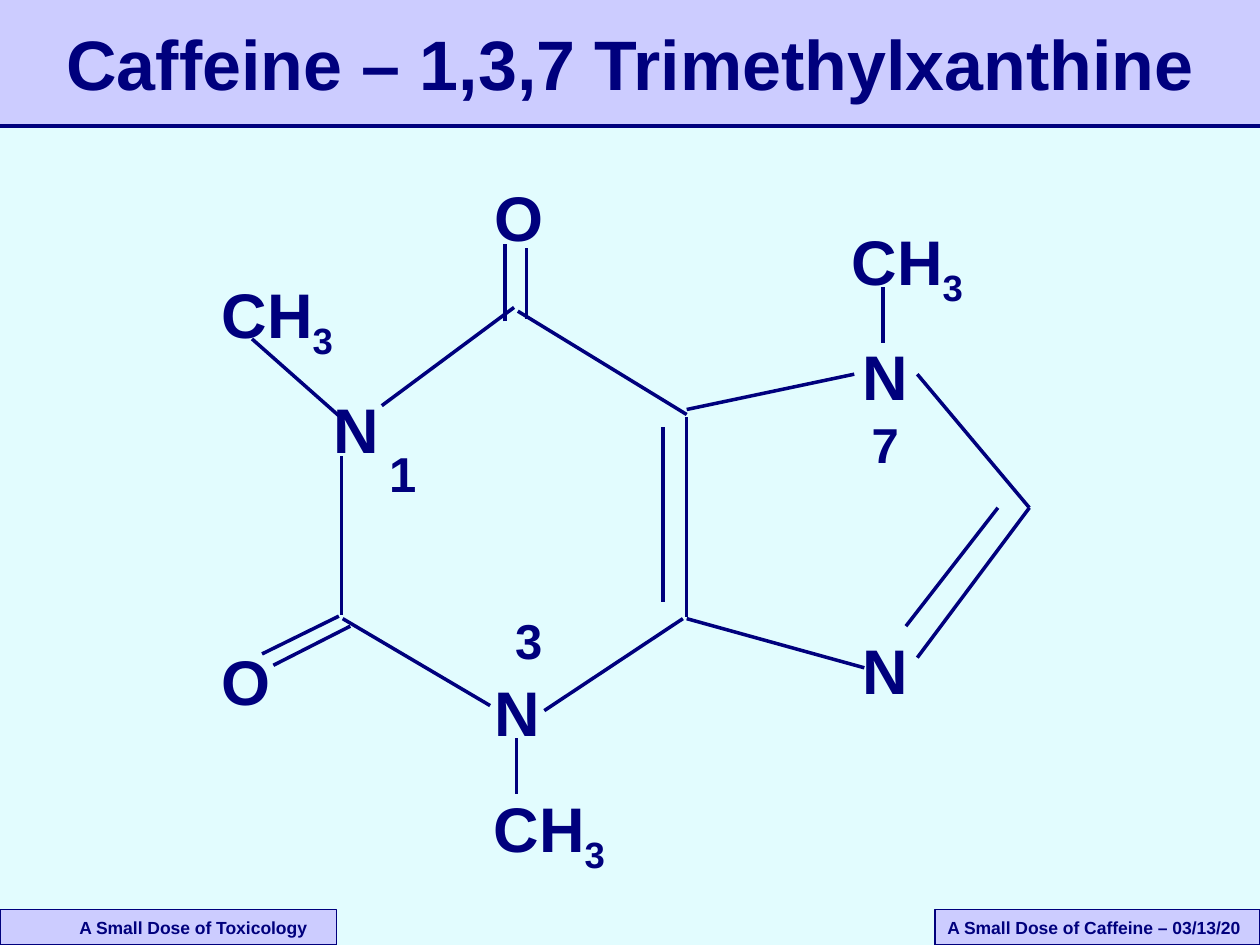
from dataclasses import dataclass

from pptx import Presentation
from pptx.dml.color import RGBColor
from pptx.enum.shapes import MSO_CONNECTOR, MSO_SHAPE
from pptx.enum.text import MSO_ANCHOR, PP_ALIGN
from pptx.oxml.ns import qn
from pptx.util import Inches, Pt
from lxml.etree import SubElement

COLS, ROWS = 100, 75  # square grid over the slide
CELL = Inches(10) // COLS


@dataclass(frozen=True)
class Theme:
    ink: RGBColor = RGBColor(0x00, 0x00, 0x7D)
    panel: RGBColor = RGBColor(0xCC, 0xCC, 0xFF)
    background: RGBColor = RGBColor(0xE2, 0xFC, 0xFE)
    font: str = "Arial"
    title: int = 40
    atom: int = 36
    number: int = 28
    footer: int = 10
    bond: float = 2
    border: float = 0.75


@dataclass(frozen=True)
class Label:
    text: str
    col: float
    row: float
    subscript: str = ""


@dataclass(frozen=True)
class Bond:
    col1: float
    row1: float
    col2: float
    row2: float


@dataclass(frozen=True)
class Footer:
    text: str
    col: float
    width: float
    indent: float


THEME = Theme()
BAND_ROWS = 10
FOOTER_ROWS = 2.8
LABEL_WIDTHS = {"N": 5.6, "O": 6, "CH": 11.1}
ATOM_ROWS, NUMBER_COLS, NUMBER_ROWS = 7, 4.1, 5.6

FOOTERS = [
    Footer("A Small Dose of Toxicology", 0, 26.7, 6.3),
    Footer("A Small Dose of Caffeine – 03/13/20", 74.2, 25.8, 1),
]
ATOMS = [
    Label("N", 25.5, 30.5),
    Label("N", 38.3, 53),
    Label("N", 67.5, 49.6),
    Label("N", 67.5, 26.3),
    Label("O", 16.6, 50.5),
    Label("O", 38.3, 13.7),
    Label("CH", 66.6, 17.2, "3"),
    Label("CH", 38.2, 62.2, "3"),
    Label("CH", 16.6, 21.4, "3"),
]
NUMBERS = [Label("1", 29.9, 34.7), Label("3", 39.9, 48), Label("7", 68.2, 32.4)]
BONDS = [
    # Six-membered ring
    Bond(30.3, 32.2, 40.8, 24.4),
    Bond(41.1, 24.7, 54.5, 32.9),
    Bond(54.5, 33.1, 54.5, 49),
    Bond(52.6, 33.9, 52.6, 47.8),
    Bond(43.2, 56.4, 54.2, 49.1),
    Bond(27.2, 49.1, 38.9, 56),
    Bond(27.1, 36.2, 27.1, 48.8),
    # Five-membered ring
    Bond(67.8, 29.7, 54.5, 32.5),
    Bond(72.8, 29.7, 81.7, 40.3),
    Bond(72.8, 52.2, 81.7, 40.3),
    Bond(71.9, 49.7, 79.2, 40.3),
    Bond(68.6, 53, 54.5, 49.1),
    # Methyl groups
    Bond(70.1, 27.2, 70.1, 22.8),
    Bond(41, 63, 41, 58.6),
    Bond(26.9, 33, 20, 26.9),
    # Double-bonded oxygens
    Bond(26.9, 48.9, 20.8, 51.9),
    Bond(27.8, 49.7, 21.7, 52.8),
    Bond(41.8, 19.7, 41.8, 25.3),
    Bond(40.1, 25.5, 40.1, 19.4),
]


def grid(*cells: float) -> list[int]:
    return [round(c * CELL) for c in cells]


def add_run(p, text: str, size: float):
    r = p.add_run()
    r.text = text
    r.font.name, r.font.size, r.font.bold = THEME.font, Pt(size), True
    r.font.color.rgb = THEME.ink
    return r


def add_panel(s, col: float, row: float, width: float, height: float):
    sp = s.shapes.add_shape(MSO_SHAPE.RECTANGLE, *grid(col, row, width, height))
    sp.shadow.inherit = False
    sp.fill.solid()
    sp.fill.fore_color.rgb = THEME.panel
    sp.line.fill.background()
    return sp


def add_line(s, bond: Bond) -> None:
    line = s.shapes.add_connector(
        MSO_CONNECTOR.STRAIGHT, *grid(bond.col1, bond.row1, bond.col2, bond.row2))
    line.line.color.rgb = THEME.ink
    line.line.width = Pt(THEME.bond)
    SubElement(line.element.spPr, qn("a:effectLst"))


def add_label(s, label: Label, width: float, height: float, size: float) -> None:
    sp = s.shapes.add_textbox(*grid(label.col, label.row, width, height))
    tf = sp.text_frame
    tf.word_wrap = False
    p = tf.paragraphs[0]
    add_run(p, label.text, size)
    if label.subscript:
        r = add_run(p, label.subscript, size)
        r.font._element.set("baseline", "-25000")


def add_footer(s, footer: Footer) -> None:
    sp = add_panel(s, footer.col, ROWS - FOOTER_ROWS, footer.width, FOOTER_ROWS)
    sp.line.color.rgb = THEME.ink
    sp.line.width = Pt(THEME.border)
    tf = sp.text_frame
    tf.word_wrap = False
    tf.vertical_anchor = MSO_ANCHOR.MIDDLE
    tf.margin_left, = grid(footer.indent)
    p = tf.paragraphs[0]
    p.alignment = PP_ALIGN.LEFT
    add_run(p, footer.text, THEME.footer)


def set_title(s, text: str) -> None:
    sp = s.shapes.title
    sp.left, sp.top, sp.width, sp.height = grid(2.5, 1.2, 95, 7.6)
    tf = sp.text_frame
    tf.word_wrap = True
    tf.vertical_anchor = MSO_ANCHOR.MIDDLE
    p = tf.paragraphs[0]
    p.alignment = PP_ALIGN.CENTER
    add_run(p, text, THEME.title)
    sp.element.getparent().append(sp.element)  # in front of the band


def main() -> None:
    prs = Presentation()
    prs.slide_width, prs.slide_height = grid(COLS, ROWS)
    s = prs.slides.add_slide(prs.slide_layouts[5])
    s.background.fill.solid()
    s.background.fill.fore_color.rgb = THEME.background

    # Header band, footers and title
    add_panel(s, 0, 0, COLS, BAND_ROWS)
    add_line(s, Bond(0, BAND_ROWS, COLS, BAND_ROWS))
    for footer in FOOTERS:
        add_footer(s, footer)
    set_title(s, "Caffeine – 1,3,7 Trimethylxanthine")

    # Molecule: bonds, atoms and position numbers
    for bond in BONDS:
        add_line(s, bond)
    for atom in ATOMS:
        add_label(s, atom, LABEL_WIDTHS[atom.text], ATOM_ROWS, THEME.atom)
    for number in NUMBERS:
        add_label(s, number, NUMBER_COLS, NUMBER_ROWS, THEME.number)

    prs.save("out.pptx")


if __name__ == "__main__":
    main()
